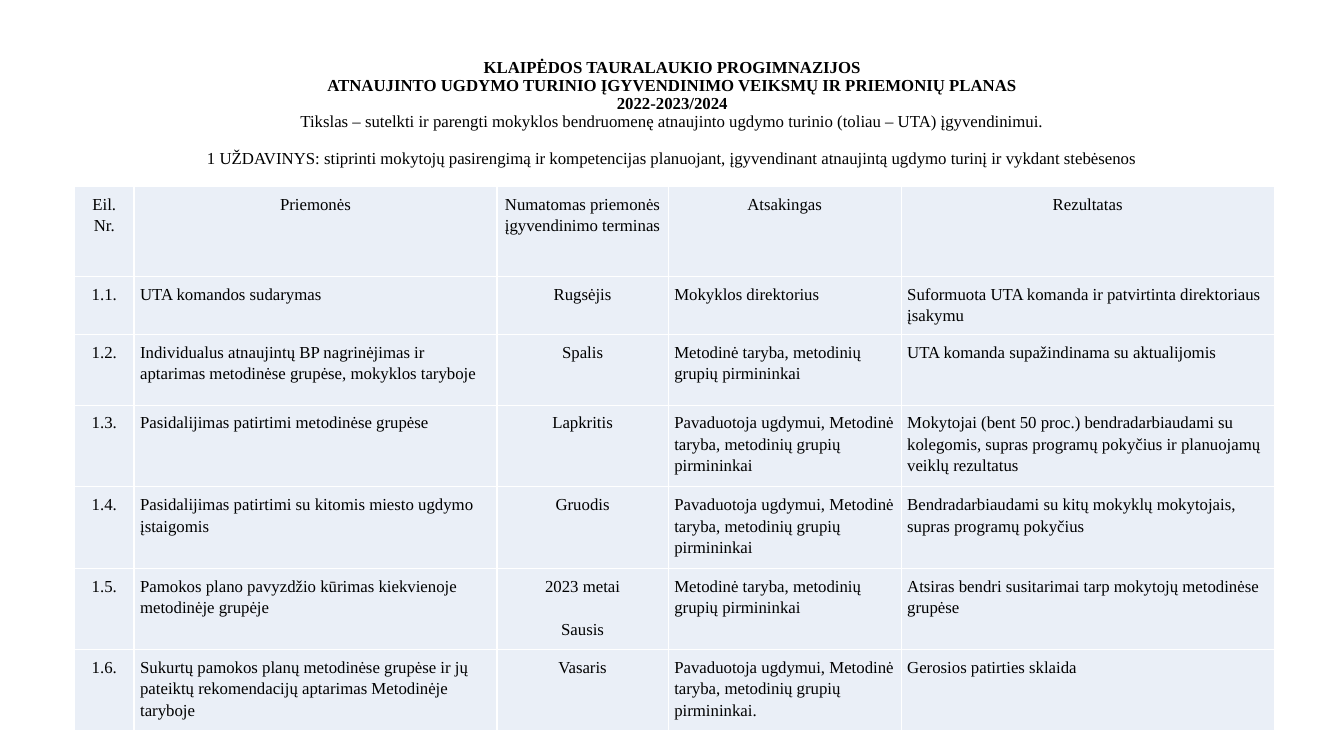
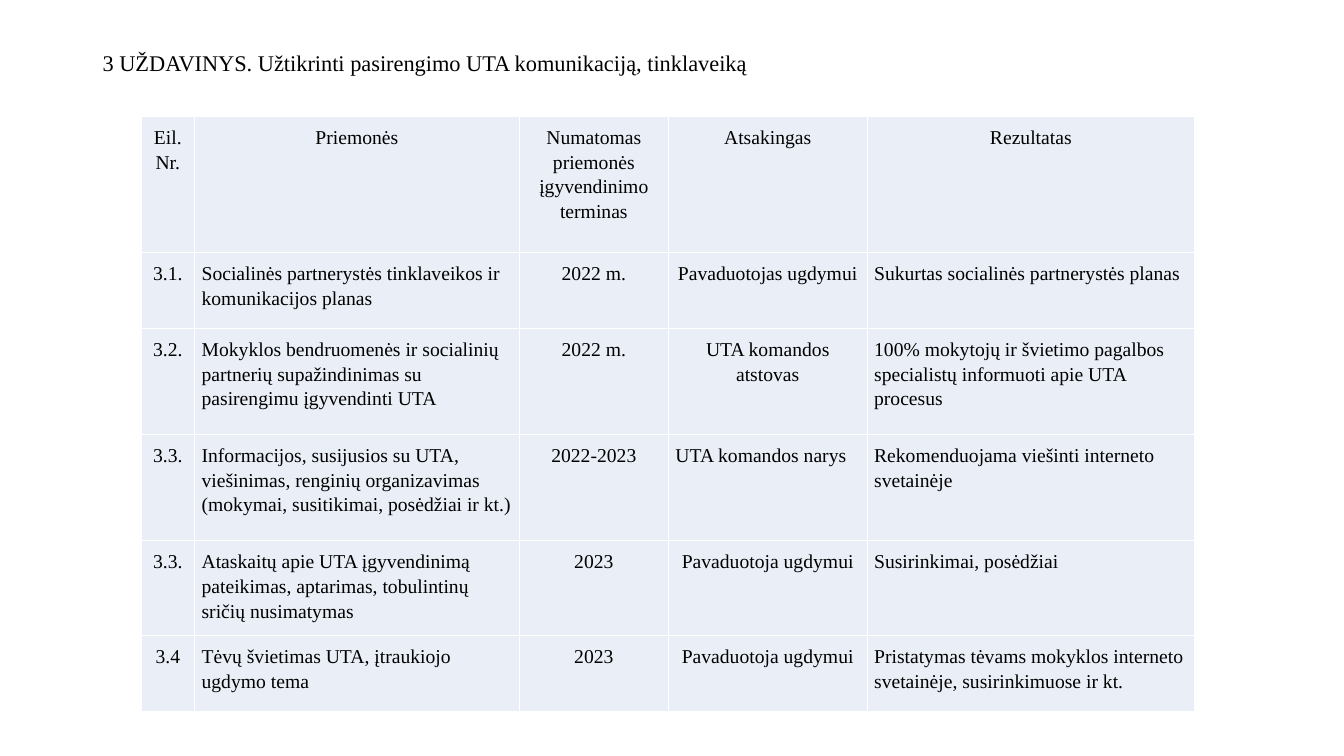
from pptx import Presentation
from pptx.dml.color import RGBColor
from pptx.enum.text import MSO_ANCHOR, PP_ALIGN
from pptx.oxml import parse_xml
from pptx.oxml.ns import nsdecls
from pptx.util import Inches, Pt

# Shared style
HUES = {"ink": "000000", "cell": "EAEFF7", "line": "FFFFFF"}
FACE = "Times New Roman"
MID, LEFT = PP_ALIGN.CENTER, PP_ALIGN.LEFT
HEAD = ["Eil. Nr.", "Priemonės", "Numatomas priemonės įgyvendinimo terminas",
        "Atsakingas", "Rezultatas"]

deck = Presentation()
deck.slide_width, deck.slide_height = Inches(13.33), Inches(7.5)
# One percent of the slide's width and height
WIDE, HIGH = deck.slide_width / 100, deck.slide_height / 100


def style(para, text, size, align, space, bold=False):
    para.text = text
    para.alignment = align
    para.line_spacing = space
    font = para.font
    font.name, font.size, font.bold = FACE, Pt(size), bold
    font.color.rgb = RGBColor.from_string(HUES["ink"])


def frame(cell):
    """Draw the four cell borders, then the fill."""
    props = cell._tc.get_or_add_tcPr()
    for side in "LRTB":
        props.append(parse_xml(
            f'<a:ln{side} {nsdecls("a")} w="12700"><a:solidFill>'
            f'<a:srgbClr val="{HUES["line"]}"/></a:solidFill></a:ln{side}>'))
    cell.fill.solid()
    cell.fill.fore_color.rgb = RGBColor.from_string(HUES["cell"])


# Content: places and sizes are percent of the slide
BOARD = "Metodinė taryba, metodinių grupių pirmininkai"
DEPUTY = "Pavaduotoja ugdymui"
TEAM = f"{DEPUTY}, {BOARD}"

pages = [
    {
        "title": [
            "KLAIPĖDOS TAURALAUKIO PROGIMNAZIJOS",
            "ATNAUJINTO UGDYMO TURINIO ĮGYVENDINIMO VEIKSMŲ IR PRIEMONIŲ PLANAS",
            "2022-2023/2024",
            "Tikslas – sutelkti ir parengti mokyklos bendruomenę atnaujinto "
            "ugdymo turinio (toliau – UTA) įgyvendinimui.",
            "1 UŽDAVINYS: stiprinti mokytojų pasirengimą ir kompetencijas "
            "planuojant, įgyvendinant atnaujintą ugdymo turinį ir vykdant stebėsenos",
        ],
        "bold": 3, "gap": {4: 13}, "align": MID, "tall": 19.33, "tsize": 12,
        "left": 5.55, "top": 24.67, "size": 12, "pad": 0.06,
        "cols": [4.43, 27, 12.75, 17.33, 27.76],
        "rows": [11.87, 7.6, 9.33] + [10.71] * 4,
        "mids": {0, 2}, "lefts": set(),
        "body": [
            ["1.1.", "UTA komandos sudarymas", "Rugsėjis", "Mokyklos direktorius",
             "Suformuota UTA komanda ir patvirtinta direktoriaus įsakymu"],
            ["1.2.", "Individualus atnaujintų BP nagrinėjimas ir aptarimas "
             "metodinėse grupėse, mokyklos taryboje", "Spalis", BOARD,
             "UTA komanda supažindinama su aktualijomis"],
            ["1.3.", "Pasidalijimas patirtimi metodinėse grupėse", "Lapkritis", TEAM,
             "Mokytojai (bent 50 proc.) bendradarbiaudami su kolegomis, supras "
             "programų pokyčius ir planuojamų veiklų rezultatus"],
            ["1.4.", "Pasidalijimas patirtimi su kitomis miesto ugdymo įstaigomis",
             "Gruodis", TEAM,
             "Bendradarbiaudami su kitų mokyklų mokytojais, supras programų pokyčius"],
            ["1.5.", "Pamokos plano pavyzdžio kūrimas kiekvienoje metodinėje grupėje",
             "2023 metai\nSausis", BOARD,
             "Atsiras bendri susitarimai tarp mokytojų metodinėse grupėse"],
            ["1.6.", "Sukurtų pamokos planų metodinėse grupėse ir jų pateiktų "
             "rekomendacijų aptarimas Metodinėje taryboje", "Vasaris", TEAM + ".",
             "Gerosios patirties sklaida"],
        ],
    },
    {
        "title": ["3 UŽDAVINYS. Užtikrinti pasirengimo UTA komunikaciją, tinklaveiką"],
        "bold": 0, "gap": {}, "align": LEFT, "tall": 6.4, "tsize": 16,
        "left": 10.5, "top": 15.4, "size": 14, "pad": 0.07,
        "cols": [3.98, 24.16, 11.1, 14.78, 24.38],
        "rows": [18, 10.05, 14.03, 14.03, 11.64, 10.05],
        "mids": {0, 2, 3}, "lefts": {(3, 3)},
        "body": [
            ["3.1.", "Socialinės partnerystės tinklaveikos ir komunikacijos planas",
             "2022 m.", "Pavaduotojas ugdymui",
             "Sukurtas socialinės partnerystės planas"],
            ["3.2.", "Mokyklos bendruomenės ir socialinių partnerių supažindinimas su "
             "pasirengimu įgyvendinti UTA", "2022 m.", "UTA komandos atstovas",
             "100% mokytojų ir švietimo pagalbos specialistų informuoti apie UTA procesus"],
            ["3.3.", "Informacijos, susijusios su UTA, viešinimas, renginių organizavimas "
             "(mokymai, susitikimai, posėdžiai ir kt.)", "2022-2023",
             "UTA komandos narys", "Rekomenduojama viešinti interneto svetainėje"],
            ["3.3.", "Ataskaitų apie UTA įgyvendinimą pateikimas, aptarimas, "
             "tobulintinų sričių nusimatymas", "2023", DEPUTY, "Susirinkimai, posėdžiai"],
            ["3.4", "Tėvų švietimas UTA, įtraukiojo ugdymo tema", "2023", DEPUTY,
             "Pristatymas tėvams mokyklos interneto svetainėje, susirinkimuose ir kt."],
        ],
    },
]

for page in pages:
    slide = deck.slides.add_slide(deck.slide_layouts[6])

    # Title
    box = slide.shapes.add_textbox(int(6.9 * WIDE), int(5.33 * HIGH),
                                   int(86.25 * WIDE), int(page["tall"] * HIGH))
    text = box.text_frame
    text.word_wrap = True
    text.vertical_anchor = MSO_ANCHOR.MIDDLE
    for num, line in enumerate(page["title"]):
        para = text.add_paragraph() if num else text.paragraphs[0]
        style(para, line, page["tsize"], page["align"], 0.9, num < page["bold"])
        para.space_before = Pt(page["gap"].get(num, 0))

    # Table grid
    cols, rows = page["cols"], page["rows"]
    grid = slide.shapes.add_table(
        len(rows), len(cols), int(page["left"] * WIDE), int(page["top"] * HIGH),
        int(sum(cols) * WIDE), int(sum(rows) * HIGH)).table
    grid.first_row = grid.horz_banding = False
    for col, share in zip(grid.columns, cols):
        col.width = int(share * WIDE)
    for row, share in zip(grid.rows, rows):
        row.height = int(share * HIGH)

    # Table cells
    pad = Inches(page["pad"])
    for r, words in enumerate([HEAD] + page["body"]):
        for c, word in enumerate(words):
            cell = grid.cell(r, c)
            frame(cell)
            cell.margin_left = cell.margin_right = pad
            cell.margin_top = cell.margin_bottom = pad
            mid = r == 0 or (c in page["mids"] and (r, c) not in page["lefts"])
            for num, line in enumerate(word.split("\n")):
                text = cell.text_frame
                para = text.add_paragraph() if num else text.paragraphs[0]
                style(para, line, page["size"], MID if mid else LEFT, 1.15)
                # A second line stands one empty line lower
                para.space_before = Pt(num * page["size"] * 1.3)

deck.save("out.pptx")
